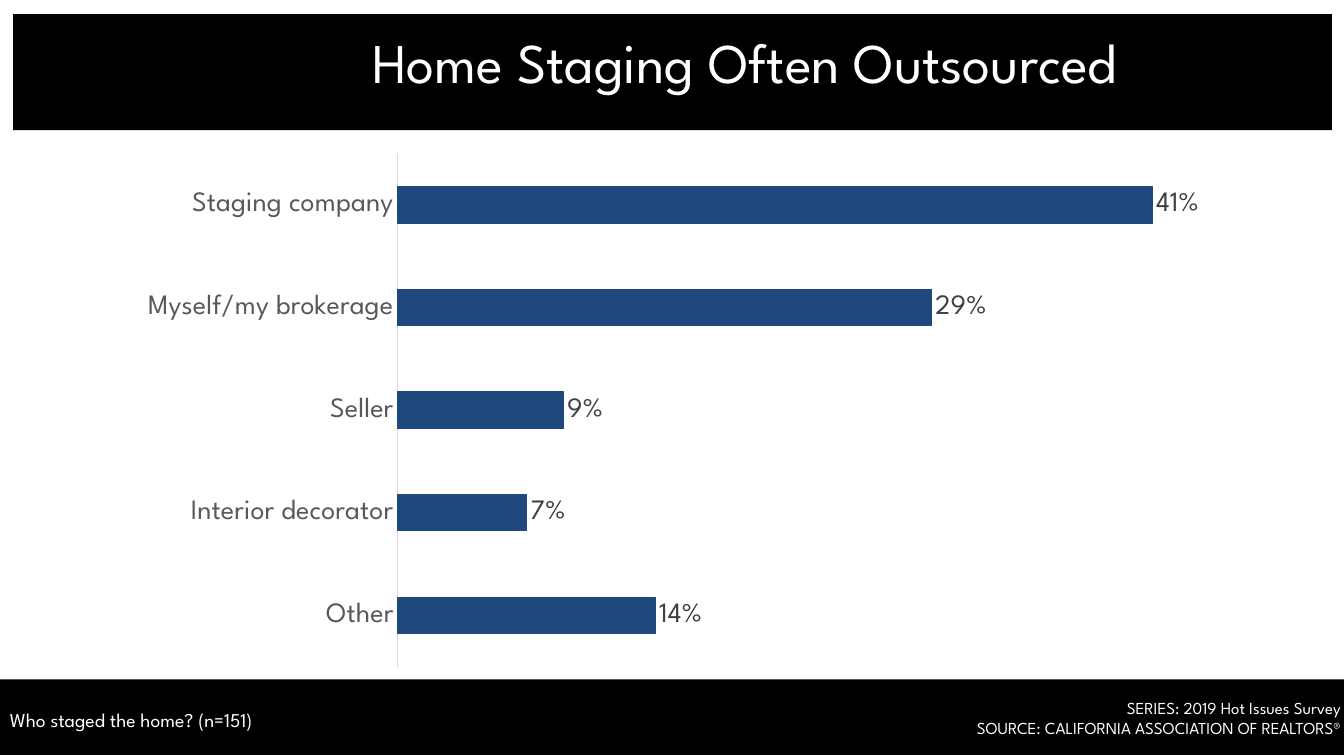
"""Build the home staging survey slide with its bar chart."""
from lxml import etree
from pptx import Presentation
from pptx import util as u
from pptx.chart.data import CategoryChartData
from pptx.dml.color import RGBColor
from pptx.enum import chart as charts, shapes, text
from pptx.oxml.ns import qn

FONT = "League Spartan"
BLACK, WHITE, BLUE = "000000", "FFFFFF", "1F497D"
LABEL_GREY, VALUE_GREY, AXIS_GREY = "595959", "404040", "D9D9D9"
WIDTH, HEIGHT = 13.33, 7.5

TITLE = "Home Staging Often Outsourced"
QUESTION = "Who staged the home? (n=151)"
CREDITS = [
    "SERIES: 2019 Hot Issues Survey",
    "SOURCE: CALIFORNIA ASSOCIATION OF REALTORS®",
]
STAGERS = {
    "Staging company": 0.41,
    "Myself/my brokerage": 0.29,
    "Seller": 0.09,
    "Interior decorator": 0.07,
    "Other": 0.14,
}
BANDS = [(0, 6.74, WIDTH, 0.75), (0.13, 0.14, WIDTH - 0.25, 1.15)]
TITLE_BOX = (1.7, 0.31, 11.37, 0.67)
CREDITS_BOX = (8.96, 6.87, 4.44, 0.5)
QUESTION_BOX = (0, 6.97, 4.78, 0.34)
CHART_BOX = (1.28, 1.42, 11.1, 5.3)
PLOT_SHARES = {"x": 0.24, "y": 0.02, "w": 0.74, "h": 0.96}


def color(value):
    return RGBColor.from_string(value)


def inches(box):
    return [u.Inches(length) for length in box]


def style(font, size, value):
    font.name, font.size = FONT, u.Pt(size)
    font.color.rgb = color(value)


def write(shape, lines, size, alignment):
    frame = shape.text_frame
    frame.text = "\n".join(lines)
    for paragraph in frame.paragraphs:
        paragraph.alignment = alignment
        for run in paragraph.runs:
            style(run.font, size, WHITE)
    return frame


def add_band(slide, box):
    band = slide.shapes.add_shape(shapes.MSO_SHAPE.RECTANGLE, *inches(box))
    band.shadow.inherit = False
    band.fill.solid()
    band.fill.fore_color.rgb = color(BLACK)
    band.line.fill.background()


def add_note(slide, box, lines, size, alignment, wrap):
    frame = write(slide.shapes.add_textbox(*inches(box)), lines, size, alignment)
    frame.word_wrap = wrap
    frame.auto_size = text.MSO_AUTO_SIZE.SHAPE_TO_FIT_TEXT


def place_plot(chart):
    plot_area = chart.plots[0]._element.getparent()
    for old in plot_area.findall(qn("c:layout")):
        plot_area.remove(old)
    layout = etree.Element(qn("c:layout"))
    plot_area.insert(0, layout)
    manual = etree.SubElement(layout, qn("c:manualLayout"))
    settings = {"layoutTarget": "inner", "xMode": "edge", "yMode": "edge", **PLOT_SHARES}
    for name, value in settings.items():
        etree.SubElement(manual, qn("c:" + name)).set("val", str(value))


def add_stager_chart(slide):
    data = CategoryChartData(number_format="0%")
    data.categories = list(STAGERS)
    data.add_series("Series 1", list(STAGERS.values()))
    kind = charts.XL_CHART_TYPE.BAR_CLUSTERED
    chart = slide.shapes.add_chart(kind, *inches(CHART_BOX), data).chart
    chart.has_legend = chart.has_title = False
    style(chart.font, 12, BLACK)
    place_plot(chart)

    stager_axis, share_axis = chart.category_axis, chart.value_axis
    stager_axis.reverse_order = True
    stager_axis.major_tick_mark = charts.XL_TICK_MARK.NONE
    stager_axis.format.line.color.rgb = color(AXIS_GREY)
    stager_axis.format.line.width = u.Pt(0.75)
    style(stager_axis.tick_labels.font, 20, LABEL_GREY)
    share_axis.minimum_scale, share_axis.maximum_scale = 0, 0.45
    share_axis.has_major_gridlines = False
    share_axis.visible = False

    plot = chart.plots[0]
    plot.gap_width = 182
    plot.vary_by_categories = False
    bars = plot.series[0]
    bars.format.fill.solid()
    bars.format.fill.fore_color.rgb = color(BLUE)
    bars.format.line.color.rgb = color(BLUE)
    bars.format.line.width = u.Pt(0.75)
    labels = bars.data_labels
    labels.show_value = True
    labels.position = charts.XL_LABEL_POSITION.OUTSIDE_END
    labels.number_format, labels.number_format_is_linked = "0%", False
    style(labels.font, 20, VALUE_GREY)


def main():
    presentation = Presentation()
    presentation.slide_width, presentation.slide_height = inches((WIDTH, HEIGHT))
    slide = presentation.slides.add_slide(presentation.slide_layouts[5])
    for box in BANDS:
        add_band(slide, box)

    title = slide.shapes.title
    title.left, title.top, title.width, title.height = inches(TITLE_BOX)
    frame = write(title, [TITLE], 40, text.PP_ALIGN.CENTER)
    frame.vertical_anchor = text.MSO_ANCHOR.MIDDLE
    frame.auto_size = text.MSO_AUTO_SIZE.NONE
    frame.paragraphs[0].line_spacing = 0.9
    slide.shapes._spTree.append(title._element)

    add_note(slide, CREDITS_BOX, CREDITS, 12, text.PP_ALIGN.RIGHT, False)
    add_note(slide, QUESTION_BOX, [QUESTION], 14, text.PP_ALIGN.LEFT, True)
    add_stager_chart(slide)
    presentation.save("out.pptx")


if __name__ == "__main__":
    main()
